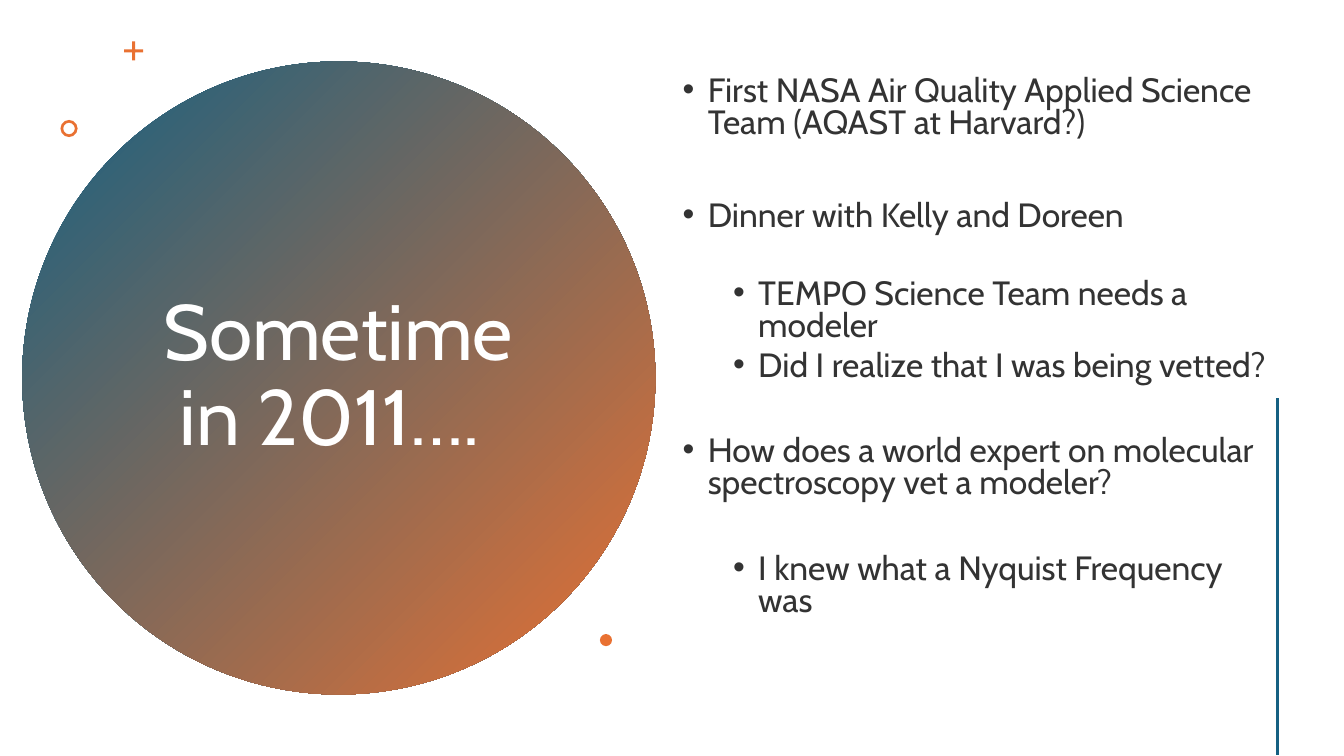
"""Build the slide about the first science team meeting in 2011."""
import pptx
import pptx.dml.color
import pptx.enum.shapes
import pptx.enum.text
import pptx.oxml
import pptx.oxml.ns
import pptx.util

Inches = pptx.util.Inches
Pt = pptx.util.Pt
RGBColor = pptx.dml.color.RGBColor
Shape = pptx.enum.shapes.MSO_SHAPE
Anchor = pptx.enum.text.MSO_ANCHOR

BLUE = RGBColor(0x15, 0x60, 0x82)
ORANGE = RGBColor(0xE9, 0x71, 0x32)
WHITE = RGBColor(0xFF, 0xFF, 0xFF)
CHARCOAL = RGBColor(0x33, 0x33, 0x33)

POINTS = [
    (0, 0, "First NASA Air Quality Applied Science Team (AQAST at Harvard?)"),
    (0, 43, "Dinner with Kelly and Doreen"),
    (1, 33, "TEMPO Science Team needs a modeler"),
    (1, 5, "Did I realize that I was being vetted?"),
    (0, 38, "How does a world expert on molecular spectroscopy vet a modeler?"),
    (1, 38, "I knew what a Nyquist Frequency was"),
]


class SlideBuilder:
    font_name = "Cabin"

    def __init__(self, deck):
        self.page = deck.slides.add_slide(deck.slide_layouts[1])

    def place(self, box, left, top, width, height):
        box.left, box.top = Inches(left), Inches(top)
        box.width, box.height = Inches(width), Inches(height)
        frame = box.text_frame
        frame.word_wrap = True
        frame.auto_size = pptx.enum.text.MSO_AUTO_SIZE.NONE
        return frame

    def style(self, para, size, color, spacing):
        para.line_spacing = spacing
        for span in para.runs:
            span.font.name = self.font_name
            span.font.size = Pt(size)
            span.font.color.rgb = color

    def title(self, text, *area):
        frame = self.place(self.page.shapes.title, *area)
        frame.vertical_anchor = Anchor.MIDDLE
        frame.text = text
        para = frame.paragraphs[0]
        para.alignment = pptx.enum.text.PP_ALIGN.CENTER
        self.style(para, 56, WHITE, 0.9)

    def bullets(self, points, *area):
        frame = self.place(self.page.placeholders[1], *area)
        frame.vertical_anchor = Anchor.TOP
        frame.margin_top = Inches(0.19)
        frame.text = "\n".join(text for level, gap, text in points)
        for para, (level, gap, text) in zip(frame.paragraphs, points):
            para.level = level
            properties = para._p.get_or_add_pPr()
            properties.set("marL", str(Inches(0.25 + 0.5 * level)))
            properties.set("indent", str(Inches(-0.25)))
            for tag, key, value in (("a:buFont", "typeface", "Arial"), ("a:buChar", "char", "•")):
                mark = pptx.oxml.parse_xml(f"<{tag} {pptx.oxml.ns.nsdecls('a')}/>")
                mark.set(key, value)
                properties.append(mark)
            para.space_before = Pt(gap)
            para.space_after = Pt(0)
            self.style(para, 24, CHARCOAL, 0.8)

    def shape(self, kind, left, top, size, color=ORANGE, adjustment=None):
        box = self.page.shapes.add_shape(
            kind, Inches(left), Inches(top), Inches(size), Inches(size))
        box.shadow.inherit = False
        box.fill.solid()
        box.fill.fore_color.rgb = color
        box.line.fill.background()
        if adjustment is not None:
            box.adjustments[0] = adjustment
        return box

    def gradient_circle(self, left, top, size):
        circle = self.shape(Shape.OVAL, left, top, size)
        circle.fill.gradient()
        circle.fill.gradient_angle = 315
        for stop, color, position in zip(circle.fill.gradient_stops, (BLUE, ORANGE), (0, 1)):
            stop.color.rgb = color
            stop.position = position
        self.page.shapes._spTree.insert(2, circle._element)

    def vertical_line(self, left, top, bottom):
        line = self.page.shapes.add_connector(
            pptx.enum.shapes.MSO_CONNECTOR.STRAIGHT,
            Inches(left), Inches(top), Inches(left), Inches(bottom))
        line.line.color.rgb = BLUE
        line.line.width = Pt(2)
        line._element.spPr.append(
            pptx.oxml.parse_xml(f"<a:effectLst {pptx.oxml.ns.nsdecls('a')}/>"))


def main():
    deck = pptx.Presentation()
    deck.slide_width, deck.slide_height = Inches(13.33), Inches(7.5)
    slide = SlideBuilder(deck)
    slide.gradient_circle(0.22, 0.61, 6.28)
    slide.title("Sometime in 2011…. ", 1.36, 1.41, 3.99, 4.67)
    slide.shape(Shape.CROSS, 1.23, 0.41, 0.19, adjustment=0.42)
    slide.shape(Shape.DONUT, 0.6, 1.19, 0.17, adjustment=0.16)
    slide.bullets(POINTS, 6.67, 0.57, 6, 6.38)
    slide.shape(Shape.OVAL, 5.95, 6.29, 0.12)
    slide.vertical_line(12.67, 3.95, 7.49)
    deck.save("out.pptx")


if __name__ == "__main__":
    main()
